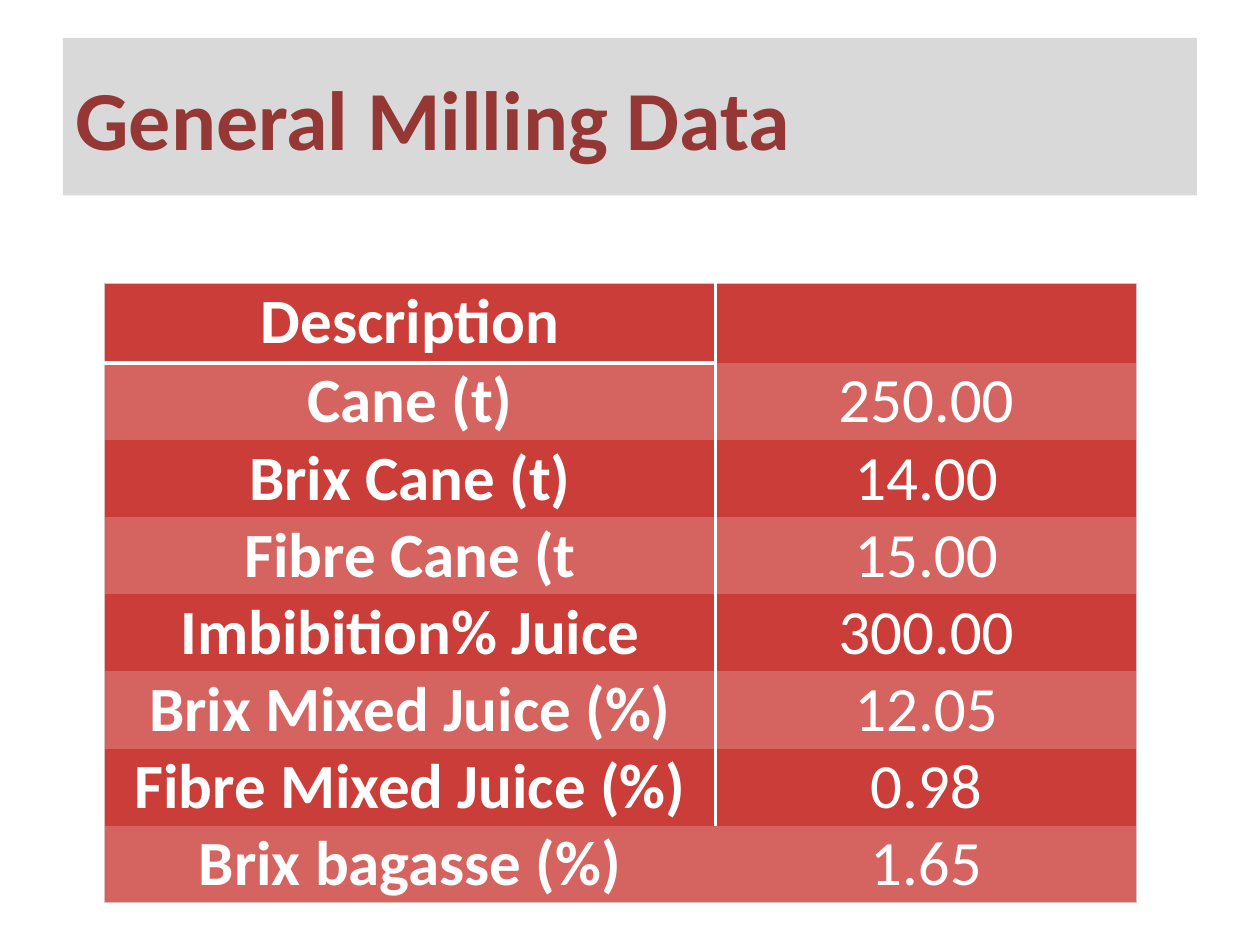
import pptx
import pptx.util
import pptx.dml.color
import pptx.enum.shapes
import pptx.enum.text
from lxml import etree
from pptx.util import Inches

COLORS = {
    "band": "D9D9D9",
    "title": "953735",
    "dark": "CB3D39",
    "light": "D56461",
    "edge": "DEBDBD",
    "white": "FFFFFF",
}
NS = "http://schemas.openxmlformats.org/drawingml/2006/main"
ROWS = [
    ("Description", ""),
    ("Cane (t)", "250.00"),
    ("Brix Cane (t)", "14.00"),
    ("Fibre Cane (t", "15.00"),
    ("Imbibition% Juice", "300.00"),
    ("Brix Mixed Juice (%)", "12.05"),
    ("Fibre Mixed Juice (%)", "0.98"),
    ("Brix bagasse (%)", "1.65"),
]


def color(name):
    return pptx.dml.color.RGBColor.from_string(COLORS[name])


def style(para, size, name, bold):
    font = para.font
    font.name = "Calibri"
    font.size = pptx.util.Pt(size)
    font.bold = bold
    font.color.rgb = color(name)


def border(cell, sides):
    props = cell._tc.get_or_add_tcPr()
    for side in "LRTB":
        line = etree.SubElement(props, f"{{{NS}}}ln{side}")
        if side not in sides:
            etree.SubElement(line, f"{{{NS}}}noFill")
            continue
        name, width = sides[side]
        line.set("w", str(pptx.util.Pt(width)))
        fill = etree.SubElement(line, f"{{{NS}}}solidFill")
        etree.SubElement(fill, f"{{{NS}}}srgbClr", val=COLORS[name])


def edges(row, col):
    thin, split, rule = ("edge", 0.75), ("white", 2), ("white", 3)
    last = len(ROWS) - 1
    sides = {"R" if col else "L": thin}
    if row < last:
        sides["L" if col else "R"] = split
    else:
        sides["B"] = thin
    if row == 0:
        sides["T"] = thin
    if col == 0 and row < 2:
        sides["T" if row else "B"] = rule
    return sides


def header(slide, left, top, width, height):
    kind = pptx.enum.shapes.MSO_SHAPE.RECTANGLE
    shape = slide.shapes.add_shape(kind, left, top, width, height)
    shape.shadow.inherit = False
    shape.fill.solid()
    shape.fill.fore_color.rgb = color("band")
    shape.line.fill.background()
    frame = shape.text_frame
    frame.word_wrap = True
    frame.vertical_anchor = pptx.enum.text.MSO_ANCHOR.MIDDLE
    para = frame.paragraphs[0]
    para.text = "General Milling Data"
    para.alignment = pptx.enum.text.PP_ALIGN.LEFT
    style(para, 48, "title", True)


def grid(slide, left, top, width, height):
    frame = slide.shapes.add_table(len(ROWS), 2, left, top, width, height)
    table = frame.table
    table.first_row = False
    table.horz_banding = False
    table.columns[0].width = Inches(4.85)
    table.columns[1].width = width - Inches(4.85)
    for row, texts in enumerate(ROWS):
        table.rows[row].height = Inches(0.57 if row else 0.63)
        for col, text in enumerate(texts):
            cell = table.cell(row, col)
            cell.margin_left = cell.margin_right = Inches(0.07)
            cell.margin_top = cell.margin_bottom = 0
            border(cell, edges(row, col))
            cell.fill.solid()
            cell.fill.fore_color.rgb = color("light" if row % 2 else "dark")
            para = cell.text_frame.paragraphs[0]
            para.text = text
            para.alignment = pptx.enum.text.PP_ALIGN.CENTER
            style(para, 36, "white", col == 0)


def main():
    deck = pptx.Presentation()
    deck.slide_width = Inches(10)
    deck.slide_height = Inches(7.5)
    slide = deck.slides.add_slide(deck.slide_layouts[6])
    header(slide, Inches(0.5), Inches(0.3), Inches(9), Inches(1.25))
    grid(slide, Inches(0.83), Inches(2.25), Inches(8.19), Inches(4.62))
    deck.save("out.pptx")


if __name__ == "__main__":
    main()
